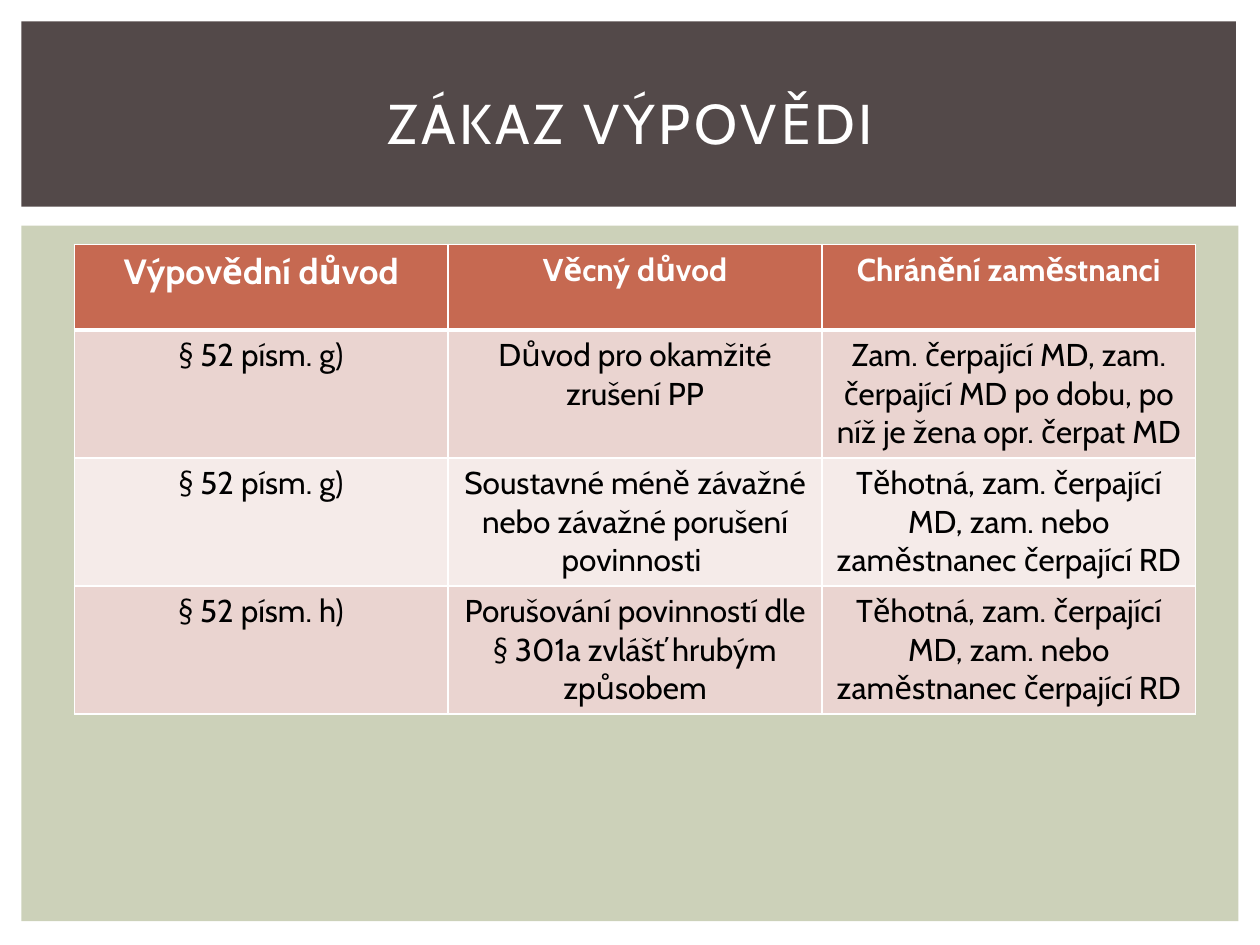
from dataclasses import dataclass

from lxml import etree
from pptx import Presentation
from pptx.dml.color import RGBColor
from pptx.enum.shapes import MSO_SHAPE
from pptx.enum.text import MSO_ANCHOR, PP_ALIGN
from pptx.oxml.ns import qn
from pptx.util import Inches, Pt

RECTANGLE = MSO_SHAPE.RECTANGLE
MIDDLE = MSO_ANCHOR.MIDDLE
CENTER = PP_ALIGN.CENTER


@dataclass(frozen=True)
class Theme:
    font: str = "Cabin"
    band: str = "534949"
    panel: str = "CCD1B9"
    header: str = "C66951"
    stripes: tuple = ("EAD4D0", "F5EBE9")
    light: str = "FFFFFF"
    dark: str = "000000"
    title_size: int = 32
    lead_size: int = 20
    text_size: int = 18
    title_spacing: int = 2
    rule: int = 1
    header_rule: int = 3


THEME = Theme()

TITLE = "ZÁKAZ VÝPOVĚDI"
ROWS = [
    ("Výpovědní důvod", "Věcný důvod", "Chránění zaměstnanci"),
    ("§ 52 písm. g)", "Důvod pro okamžité zrušení PP",
     "Zam. čerpající MD, zam. čerpající MD po dobu, po níž je žena opr. čerpat MD"),
    ("§ 52 písm. g)", "Soustavné méně závažné nebo závažné porušení povinnosti ",
     "Těhotná, zam. čerpající MD, zam. nebo zaměstnanec čerpající RD"),
    ("§ 52 písm. h)", "Porušování povinností dle § 301a zvlášť hrubým způsobem",
     "Těhotná, zam. čerpající MD, zam. nebo zaměstnanec čerpající RD"),
]
ROW_HEIGHTS = (0.68, 0.68, 0.8, 0.8)


def style_para(para, size, color, bold=False):
    para.alignment = CENTER
    para.font.name = THEME.font
    para.font.size = Pt(size)
    para.font.bold = bold
    para.font.color.rgb = RGBColor.from_string(color)


def add_panel(page, box, color):
    panel = page.shapes.add_shape(RECTANGLE, *map(Inches, box))
    panel.shadow.inherit = False
    panel.fill.solid()
    panel.fill.fore_color.rgb = RGBColor.from_string(color)
    panel.line.fill.background()
    page.shapes.title.element.addprevious(panel.element)


def add_heading(page, box):
    left, top, width, height = box
    add_panel(page, box, THEME.band)
    title = page.shapes.title
    title.left, title.top = Inches(left + 0.25), Inches(top + 0.22)
    title.width, title.height = Inches(width - 0.47), Inches(height - 0.32)
    title.text_frame.text = TITLE
    title.text_frame.vertical_anchor = MIDDLE
    para = title.text_frame.paragraphs[0]
    style_para(para, THEME.title_size, THEME.light)
    para.runs[0].font._element.set("spc", str(THEME.title_spacing * 100))


def set_borders(cell, bottom_width):
    properties = cell._tc.get_or_add_tcPr()
    widths = {"a:lnL": THEME.rule, "a:lnR": THEME.rule,
              "a:lnT": THEME.rule, "a:lnB": bottom_width}
    for position, (tag, width) in enumerate(widths.items()):
        line = etree.Element(qn(tag), w=str(Pt(width)))
        fill = etree.SubElement(line, qn("a:solidFill"))
        etree.SubElement(fill, qn("a:srgbClr"), val=THEME.light)
        properties.insert(position, line)


def fill_cell(cell, text, row, column):
    is_header = row == 0
    color = THEME.header if is_header else THEME.stripes[(row - 1) % 2]
    cell.fill.solid()
    cell.fill.fore_color.rgb = RGBColor.from_string(color)
    cell.text = text
    size = THEME.lead_size if is_header and column == 0 else THEME.text_size
    style_para(cell.text_frame.paragraphs[0], size,
               THEME.light if is_header else THEME.dark, is_header)
    set_borders(cell, THEME.header_rule if is_header else THEME.rule)
    if row == 1:
        top = cell._tc.tcPr.find(qn("a:lnT"))
        top.set("w", str(Pt(THEME.header_rule)))


def add_reasons(page, box):
    left, top, width, _ = box
    add_panel(page, box, THEME.panel)
    table = page.shapes.add_table(
        len(ROWS), len(ROWS[0]), Inches(left + 0.42), Inches(top + 0.15),
        Inches(width - 0.76), Inches(sum(ROW_HEIGHTS))).table
    for row, texts in enumerate(ROWS):
        table.rows[row].height = Inches(ROW_HEIGHTS[row])
        for column, text in enumerate(texts):
            fill_cell(table.cell(row, column), text, row, column)


def main():
    deck = Presentation()
    deck.slide_width, deck.slide_height = Inches(10), Inches(7.5)
    page = deck.slides.add_slide(deck.slide_layouts[5])
    add_heading(page, (0.17, 0.17, 9.64, 1.47))
    add_reasons(page, (0.17, 1.79, 9.66, 5.52))
    deck.save("out.pptx")


if __name__ == "__main__":
    main()
